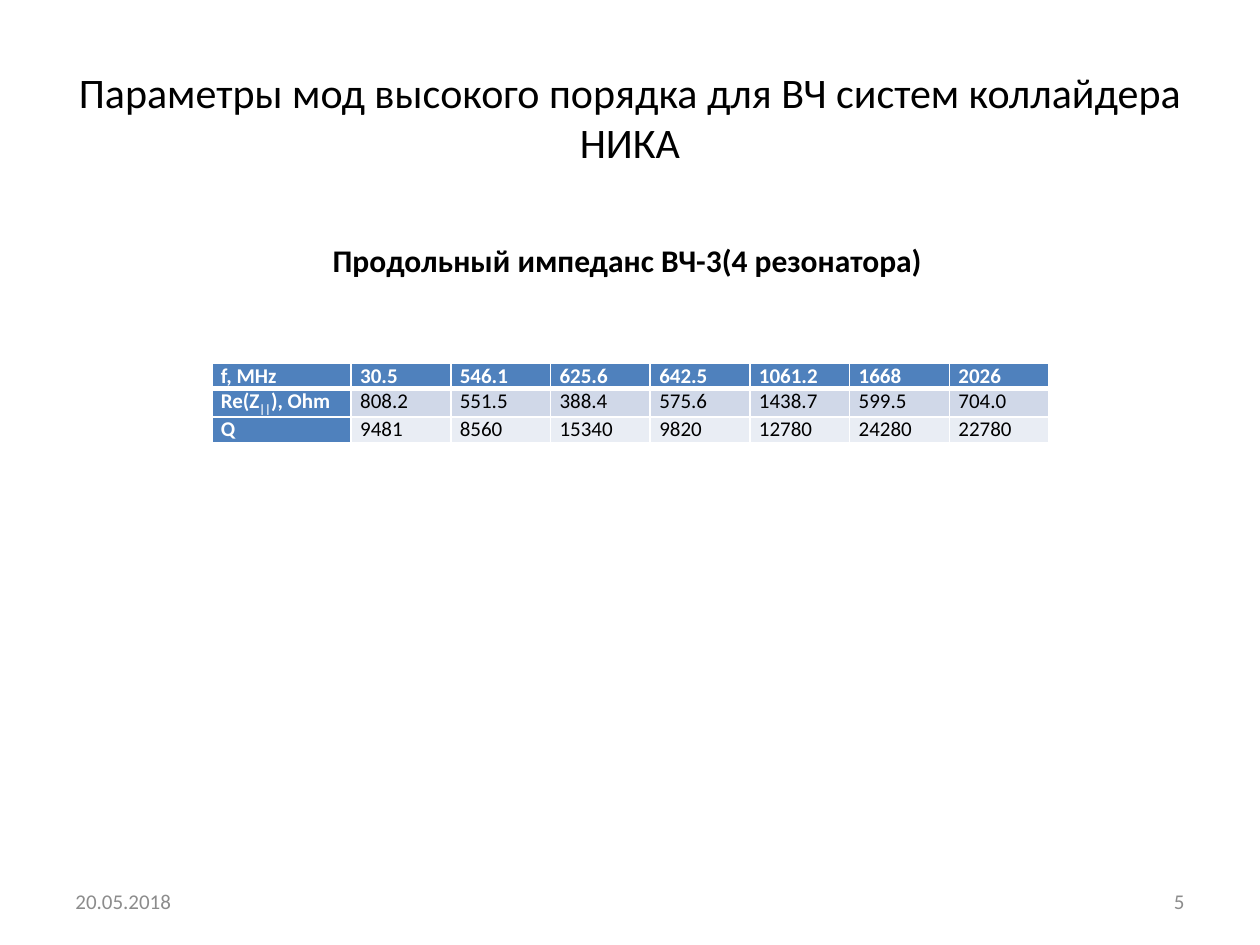
from dataclasses import dataclass

from lxml.etree import SubElement
from pptx import Presentation
from pptx.dml.color import RGBColor
from pptx.enum.text import MSO_ANCHOR, PP_ALIGN
from pptx.oxml.ns import qn
from pptx.util import Pt


@dataclass(frozen=True)
class Theme:
    font: str = "Calibri"
    text: str = "000000"
    footer: str = "8C8C8C"
    white: str = "FFFFFF"
    header: str = "4F81BD"
    bands: tuple = ("D0D8E8", "E9EDF4")
    title_size: int = 24
    heading_size: int = 18
    small_size: int = 12


THEME = Theme()

MODES = [
    ["f, MHz", "30.5", "546.1", "625.6", "642.5", "1061.2", "1668", "2026"],
    [("Re(Z", "||", "), Ohm"), "808.2", "551.5", "388.4", "575.6", "1438.7", "599.5", "704.0"],
    ["Q", "9481", "8560", "15340", "9820", "12780", "24280", "22780"],
]
LABEL_WIDTH, VALUE_WIDTH, ROW_HEIGHT = 79.6, 57, 14.4


def add_span(para, text, size=THEME.small_size, color=THEME.text, bold=False, baseline=0):
    """Append formatted text; baseline is a shift in percent, negative for subscript."""
    span = para.add_run()
    span.text = text
    span.font.name = THEME.font
    span.font.size = Pt(size)
    span.font.bold = bold
    span.font.color.rgb = RGBColor.from_string(color)
    if baseline:
        span.font._element.set("baseline", str(baseline * 1000))


def add_text(page, text, left, top, width, height, align=PP_ALIGN.LEFT,
             anchor=MSO_ANCHOR.MIDDLE, wrap=True, **style):
    box = page.shapes.add_textbox(Pt(left), Pt(top), Pt(width), Pt(height))
    frame = box.text_frame
    frame.word_wrap = wrap
    frame.vertical_anchor = anchor
    para = frame.paragraphs[0]
    para.alignment = align
    add_span(para, text, **style)


def set_borders(cell, **widths):
    """Draw white borders, L, R, T and B wide; call before the cell gets its fill."""
    properties = cell._tc.get_or_add_tcPr()
    for side, width in widths.items():
        line = SubElement(properties, qn(f"a:ln{side}"), w=str(Pt(width)))
        fill = SubElement(line, qn("a:solidFill"))
        SubElement(fill, qn("a:srgbClr"), val=THEME.white)


def format_cell(cell, content, row, column):
    is_header = row == 0 or column == 0
    set_borders(cell, L=1, R=1, T=3 if row == 1 else 1, B=3 if row == 0 else 1)
    cell.fill.solid()
    fill = THEME.header if is_header else THEME.bands[(row - 1) % 2]
    cell.fill.fore_color.rgb = RGBColor.from_string(fill)
    cell.margin_left = cell.margin_right = Pt(5.2)
    cell.margin_top = cell.margin_bottom = Pt(0)
    para = cell.text_frame.paragraphs[0]
    parts = (content,) if isinstance(content, str) else content
    for index, part in enumerate(parts):
        add_span(para, part, color=THEME.white if is_header else THEME.text,
                 bold=is_header, baseline=-25 if index % 2 else 0)


def add_mode_table(page, rows, left, top):
    columns = len(rows[0])
    width = LABEL_WIDTH + VALUE_WIDTH * (columns - 1)
    table = page.shapes.add_table(len(rows), columns, Pt(left), Pt(top),
                                  Pt(width), Pt(ROW_HEIGHT * len(rows))).table
    table.first_col = True
    for index, column in enumerate(table.columns):
        column.width = Pt(VALUE_WIDTH if index else LABEL_WIDTH)
    for row, contents in enumerate(rows):
        table.rows[row].height = Pt(ROW_HEIGHT)
        for column, content in enumerate(contents):
            format_cell(table.cell(row, column), content, row, column)


def main():
    deck = Presentation()
    deck.slide_width, deck.slide_height = Pt(720), Pt(540)
    page = deck.slides.add_slide(deck.slide_layouts[6])
    add_text(page, "Параметры мод высокого порядка для ВЧ систем коллайдера НИКА",
             36, 21.6, 648, 90, align=PP_ALIGN.CENTER, size=THEME.title_size)
    add_text(page, "20.05.2018", 36, 500.5, 168, 28.8, color=THEME.footer)
    add_text(page, "5", 516, 500.5, 168, 28.8, align=PP_ALIGN.RIGHT, color=THEME.footer)
    add_mode_table(page, MODES, 121, 207.5)
    add_text(page, "Продольный импеданс ВЧ-3(4 резонатора)", 183, 134, 353.5, 29,
             anchor=MSO_ANCHOR.TOP, wrap=False, size=THEME.heading_size, bold=True)
    deck.save("out.pptx")


if __name__ == "__main__":
    main()
